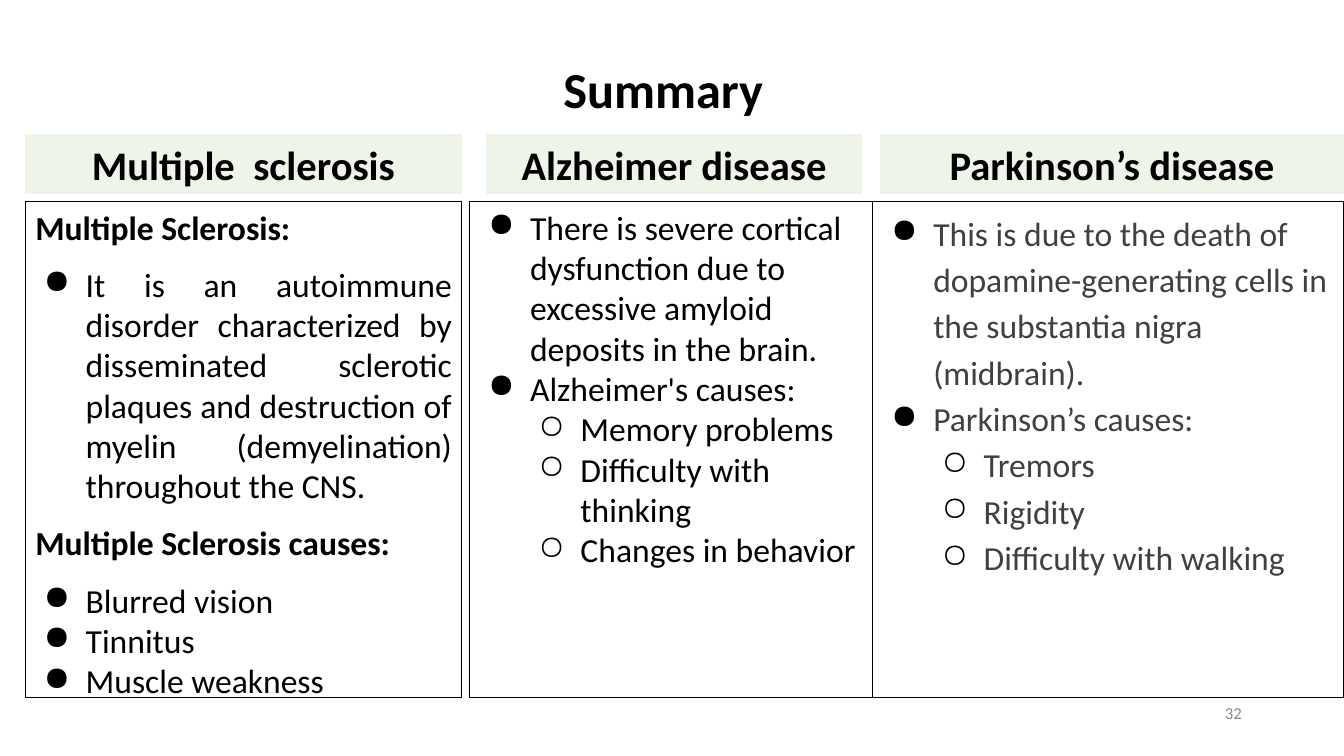
from lxml.etree import SubElement
from pptx import Presentation
from pptx.dml.color import RGBColor
from pptx.enum.shapes import MSO_SHAPE as Shape
from pptx.enum.text import MSO_ANCHOR as Anchor, PP_ALIGN as Align
from pptx.oxml.ns import qn
from pptx.util import Cm, Pt


def color(value):
    return RGBColor.from_string(value)


def write(para, text, size, ink, bold=False):
    span = para.add_run()
    span.text = text
    style = {"name": "Calibri", "size": Pt(size), "bold": bold}
    for name, value in style.items():
        setattr(span.font, name, value)
    span.font.color.rgb = color(ink)


deck = Presentation()
deck.slide_width, deck.slide_height = Cm(33.87), Cm(19.05)
page = deck.slides.add_slide(deck.slide_layouts[6])

labels = [
    ("Summary", (2.11, 0.38, 29.21, 3.68), Align.CENTER, 36, "000000", True),
    ("32", (23.93, 17.45, 7.62, 1.02), Align.RIGHT, 12, "888888", False),
]
for text, place, align, size, ink, bold in labels:
    box = page.shapes.add_textbox(*map(Cm, place))
    box.text_frame.word_wrap = True
    box.text_frame.vertical_anchor = Anchor.MIDDLE
    para = box.text_frame.paragraphs[0]
    para.alignment = align
    write(para, text, size, ink, bold)

columns = [
    {
        "title": "Multiple  sclerosis", "header": (0.64, 11), "body": (0.64, 11),
        "align": Align.JUSTIFY, "spacing": None, "ink": "000000",
        "lines": [
            ("heading", "Multiple Sclerosis:"),
            ("bullet", "It is an autoimmune disorder characterized by disseminated "
                       "sclerotic plaques and destruction of myelin (demyelination) "
                       "throughout the CNS."),
            ("heading", "Multiple Sclerosis causes:"),
            ("bullet", "Blurred vision"),
            ("bullet", "Tinnitus"),
            ("bullet", "Muscle weakness"),
        ],
    },
    {
        "title": "Alzheimer disease", "header": (12.27, 9.45), "body": (11.84, 10.16),
        "align": Align.LEFT, "spacing": None, "ink": "000000",
        "lines": [
            ("bullet", "There is severe cortical dysfunction due to excessive "
                       "amyloid deposits in the brain."),
            ("bullet", "Alzheimer's causes:"),
            ("detail", "Memory problems"),
            ("detail", "Difficulty with thinking"),
            ("detail", "Changes in behavior"),
        ],
    },
    {
        "title": "Parkinson’s disease", "header": (22.2, 11.66), "body": (22, 11.86),
        "align": Align.LEFT, "spacing": 1.15, "ink": "404040",
        "lines": [
            ("bullet", "This is due to the death of dopamine-generating cells in "
                       "the substantia nigra (midbrain)."),
            ("bullet", "Parkinson’s causes:"),
            ("detail", "Tremors"),
            ("detail", "Rigidity"),
            ("detail", "Difficulty with walking"),
        ],
    },
]
bullets = {"bullet": ("●", 0, 1.27), "detail": ("○", 1, 2.54)}

for column in columns:
    frames = []
    for part, top, height, edge, anchor in [
        ("header", 3.38, 1.5, "EEF4E8", Anchor.BOTTOM),
        ("body", 5.08, 12.5, "000000", Anchor.TOP),
    ]:
        left, width = column[part]
        box = page.shapes.add_shape(
            Shape.RECTANGLE, Cm(left), Cm(top), Cm(width), Cm(height))
        box.shadow.inherit = False
        if part == "header":
            box.fill.solid()
            box.fill.fore_color.rgb = color(edge)
        else:
            box.fill.background()
        box.line.color.rgb = color(edge)
        box.line.width = Pt(0.75)
        box.text_frame.word_wrap = True
        box.text_frame.vertical_anchor = anchor
        frames.append(box.text_frame)

    header, body = frames
    para = header.paragraphs[0]
    para.alignment = Align.CENTER
    write(para, column["title"], 29, "000000", True)

    previous = None
    for kind, text in column["lines"]:
        para = body.add_paragraph() if previous else body.paragraphs[0]
        para.alignment = column["align"]
        para.line_spacing = column["spacing"]
        if previous and "heading" in (kind, previous):
            para.space_before = Pt(12)
        if kind in bullets:
            mark, para.level, indent = bullets[kind]
            properties = para._p.get_or_add_pPr()
            properties.set("marL", str(Cm(indent)))
            properties.set("indent", str(Cm(-1.06)))
            tint = SubElement(properties, qn("a:buClr"))
            SubElement(tint, qn("a:srgbClr"), val="000000")
            SubElement(properties, qn("a:buChar"), char=mark)
        write(para, text, 24, column["ink"], kind == "heading")
        previous = kind

deck.save("out.pptx")
